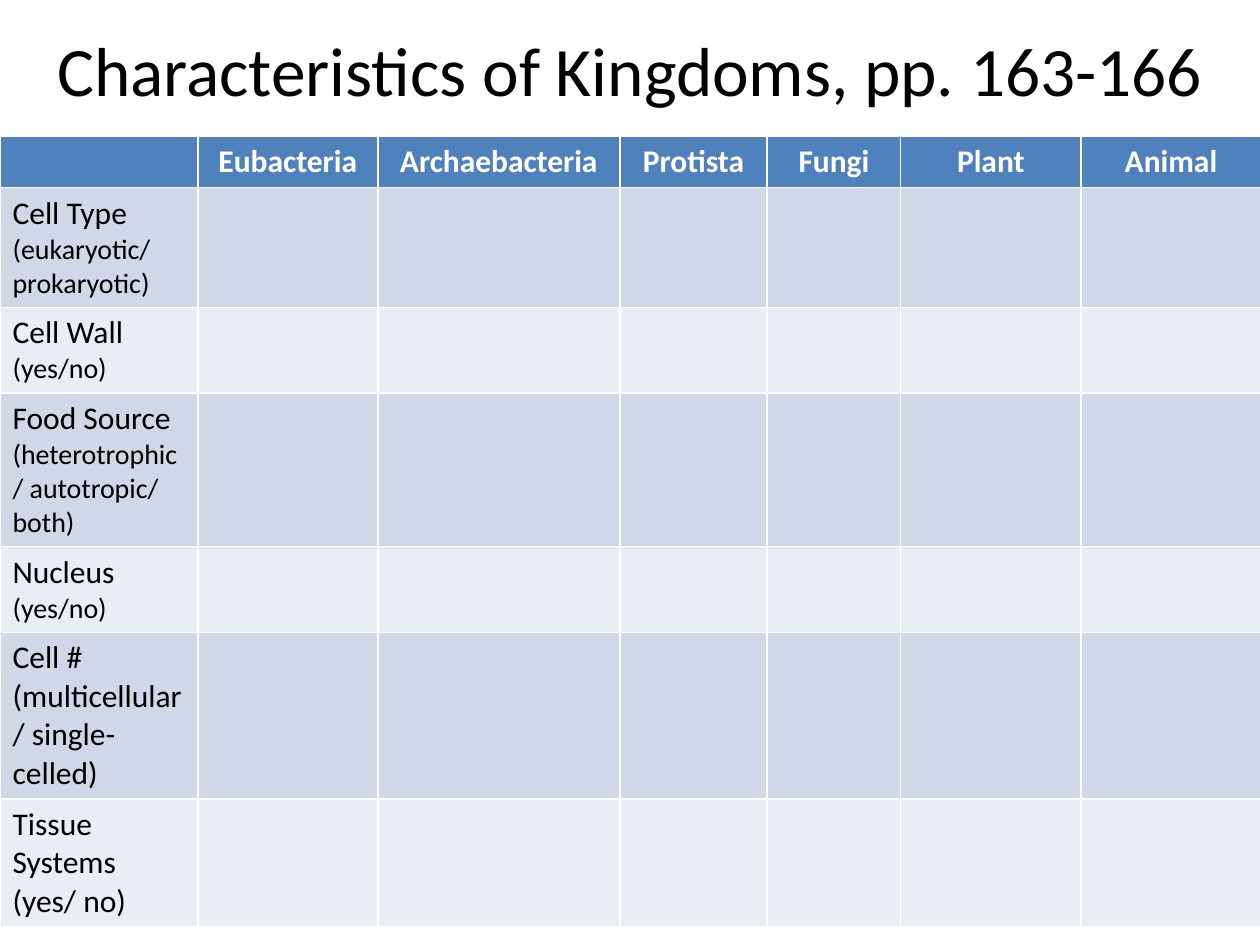
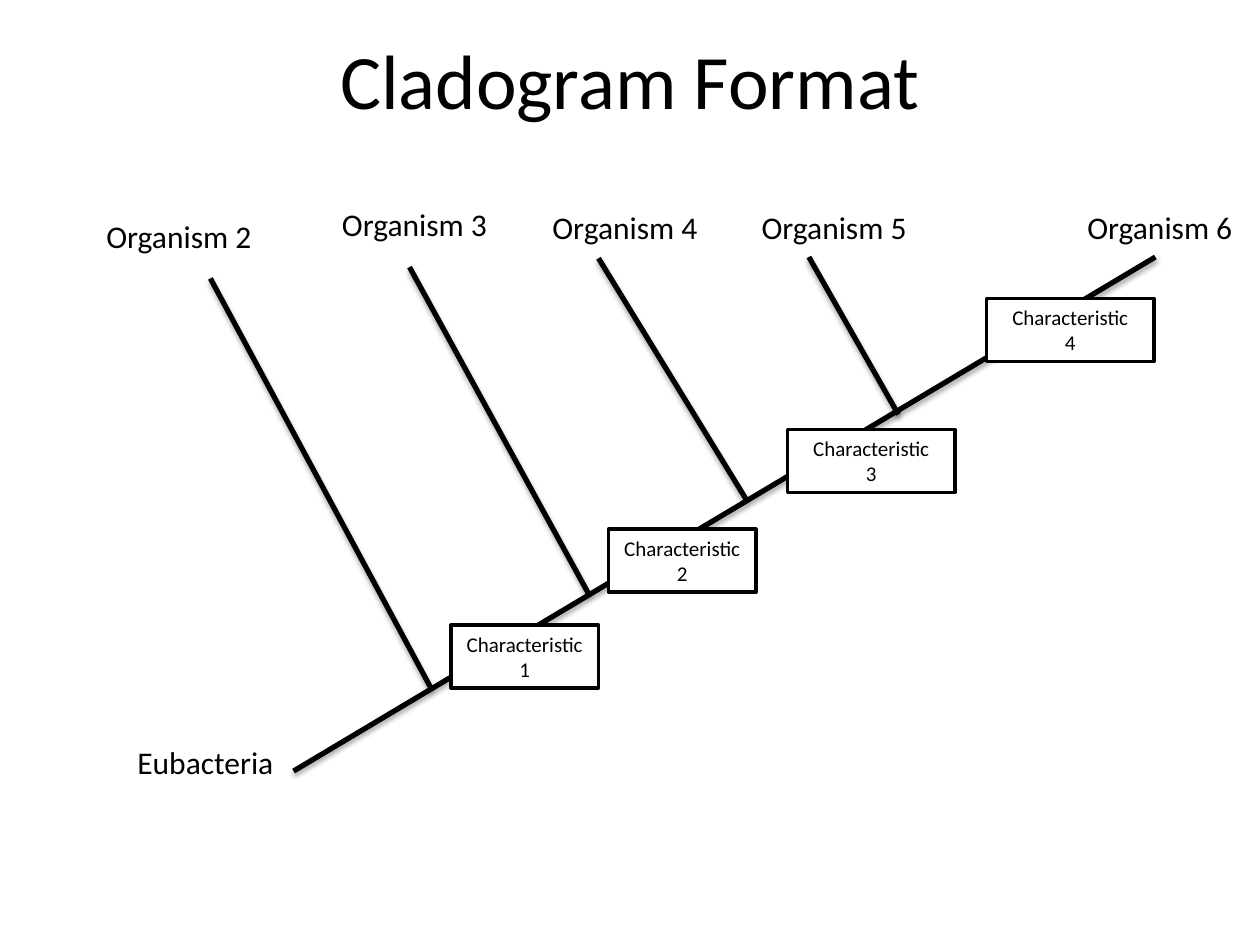
from typing import NamedTuple

from lxml.etree import SubElement
from pptx import Presentation
from pptx.dml.color import RGBColor
from pptx.enum.shapes import MSO_CONNECTOR, MSO_SHAPE
from pptx.enum.text import MSO_ANCHOR, MSO_AUTO_SIZE, PP_ALIGN
from pptx.oxml.ns import qn
from pptx.util import Inches, Pt

FONT = "Calibri"
BLACK, WHITE = "000000", "FFFFFF"
HEAD, BANDS = "4F81BD", ("D0D8E8", "E9EDF4")


class Trait(NamedTuple):
    name: str
    hint: str
    hint_size: int
    height: float


class Label(NamedTuple):
    text: str
    left: float
    top: float
    width: float


class Branch(NamedTuple):
    x1: float
    y1: float
    x2: float
    y2: float


KINGDOMS = ("Eubacteria", "Archaebacteria", "Protista", "Fungi", "Plant", "Animal")
WIDTHS = (1.57, 1.43, 1.92, 1.17, 1.06, 1.43, 1.43)
HEAD_HEIGHT = 0.41
TRAITS = (
    Trait("Cell Type ", "(eukaryotic/ prokaryotic)", 16, 0.94),
    Trait("Cell Wall ", "(yes/no)", 16, 0.68),
    Trait("Food Source ", "(heterotrophic/ autotropic/ both)", 16, 1.22),
    Trait("Nucleus ", "(yes/no)", 16, 0.68),
    Trait("Cell # ", "(multicellular/ single-celled)", 18, 1.3),
    Trait("Tissue Systems ", "(yes/ no)", 18, 1.0),
)
BRANCHES = (
    Branch(2.33, 6.12, 9.17, 2.04),
    Branch(7.13, 3.29, 6.42, 2.04),
    Branch(5.92, 3.96, 4.75, 2.05),
    Branch(4.67, 4.71, 3.25, 2.12),
    Branch(3.42, 5.46, 1.67, 2.21),
)
TIPS = (
    Label("Organism 6", 8.33, 1.6, 1.75),
    Label("Organism 5", 5.58, 1.6, 2.08),
    Label("Organism 4", 4.17, 1.6, 1.58),
    Label("Organism 3", 2.33, 1.58, 1.92),
    Label("Organism 2", 0.42, 1.67, 2),
    Label("Eubacteria", 0.92, 5.85, 1.42),
)
BOXES = (
    Label("Characteristic\n1", 3.58, 4.96, 1.17),
    Label("Characteristic\n2", 4.83, 4.2, 1.17),
    Label("Characteristic\n3", 6.25, 3.41, 1.33),
    Label("Characteristic\n4", 7.83, 2.37, 1.33),
)


def color(code: str) -> RGBColor:
    return RGBColor.from_string(code)


def fill(item, code: str) -> None:
    item.fill.solid()
    item.fill.fore_color.rgb = color(code)


def style(font, size: float, code: str = BLACK, bold: bool = False) -> None:
    font.name, font.size, font.bold = FONT, Pt(size), bold
    font.color.rgb = color(code)


def write(frame, text: str, size: float, code: str = BLACK, bold: bool = False) -> None:
    frame.text = text
    for para in frame.paragraphs:
        para.alignment = PP_ALIGN.CENTER
        style(para.font, size, code, bold)


def add_slide(deck, text: str, size: float, left: float, top: float, width: float):
    slide = deck.slides.add_slide(deck.slide_layouts[5])
    title = slide.shapes.title
    title.left, title.top = Inches(left), Inches(top)
    title.width, title.height = Inches(width), Inches(1.25)
    frame = title.text_frame
    write(frame, text, size)
    frame.vertical_anchor = MSO_ANCHOR.MIDDLE
    frame.auto_size = MSO_AUTO_SIZE.NONE
    return slide


def draw_table(slide) -> None:
    heights = (HEAD_HEIGHT, *(trait.height for trait in TRAITS))
    table = slide.shapes.add_table(
        len(heights), len(WIDTHS), Inches(0), Inches(1.08),
        Inches(sum(WIDTHS)), Inches(sum(heights))).table
    for column, width in zip(table.columns, WIDTHS):
        column.width = Inches(width)
    for index, (row, height) in enumerate(zip(table.rows, heights)):
        row.height = Inches(height)
        for cell in row.cells:
            fill(cell, BANDS[(index - 1) % 2] if index else HEAD)
    for col, name in enumerate(KINGDOMS, 1):
        write(table.cell(0, col).text_frame, name, 18, WHITE, True)
    for row, trait in enumerate(TRAITS, 1):
        para = table.cell(row, 0).text_frame.paragraphs[0]
        for text, size in ((trait.name, 18), (trait.hint, trait.hint_size)):
            run = para.add_run()
            run.text = text
            style(run.font, size)


def draw_branch(slide, branch: Branch) -> None:
    line = slide.shapes.add_connector(
        MSO_CONNECTOR.STRAIGHT, *(Inches(value) for value in branch))
    line.line.color.rgb = color(BLACK)
    line.line.width = Pt(3)
    effects = SubElement(line._element.spPr, qn("a:effectLst"))
    shadow = SubElement(effects, qn("a:outerShdw"), blurRad=str(Pt(3.1)),
                        dist=str(Pt(1.8)), dir="5400000", rotWithShape="0")
    tint = SubElement(shadow, qn("a:srgbClr"), val=BLACK)
    SubElement(tint, qn("a:alpha"), val="35000")


def draw_label(slide, label: Label, size: float, height: float, boxed: bool) -> None:
    place = [Inches(v) for v in (label.left, label.top, label.width, height)]
    if boxed:
        shape = slide.shapes.add_shape(MSO_SHAPE.RECTANGLE, *place)
        shape.shadow.inherit = False
        fill(shape, WHITE)
        shape.line.color.rgb = color(BLACK)
        shape.line.width = Pt(2)
    else:
        shape = slide.shapes.add_textbox(*place)
    frame = shape.text_frame
    write(frame, label.text, size)
    frame.word_wrap = True
    frame.vertical_anchor = MSO_ANCHOR.TOP
    frame.auto_size = MSO_AUTO_SIZE.SHAPE_TO_FIT_TEXT


def main() -> None:
    deck = Presentation()
    deck.slide_width, deck.slide_height = Inches(10), Inches(7.5)
    draw_table(add_slide(
        deck, "Characteristics of Kingdoms, pp. 163-166", 39.6, 0, -0.08, 10))
    slide = add_slide(deck, "Cladogram Format", 44, 0.5, 0, 9)
    for branch in BRANCHES:
        draw_branch(slide, branch)
    for tip in TIPS:
        draw_label(slide, tip, 18, 0.4, False)
    for box in BOXES:
        draw_label(slide, box, 12, 0.5, True)
    deck.save("out.pptx")


if __name__ == "__main__":
    main()
